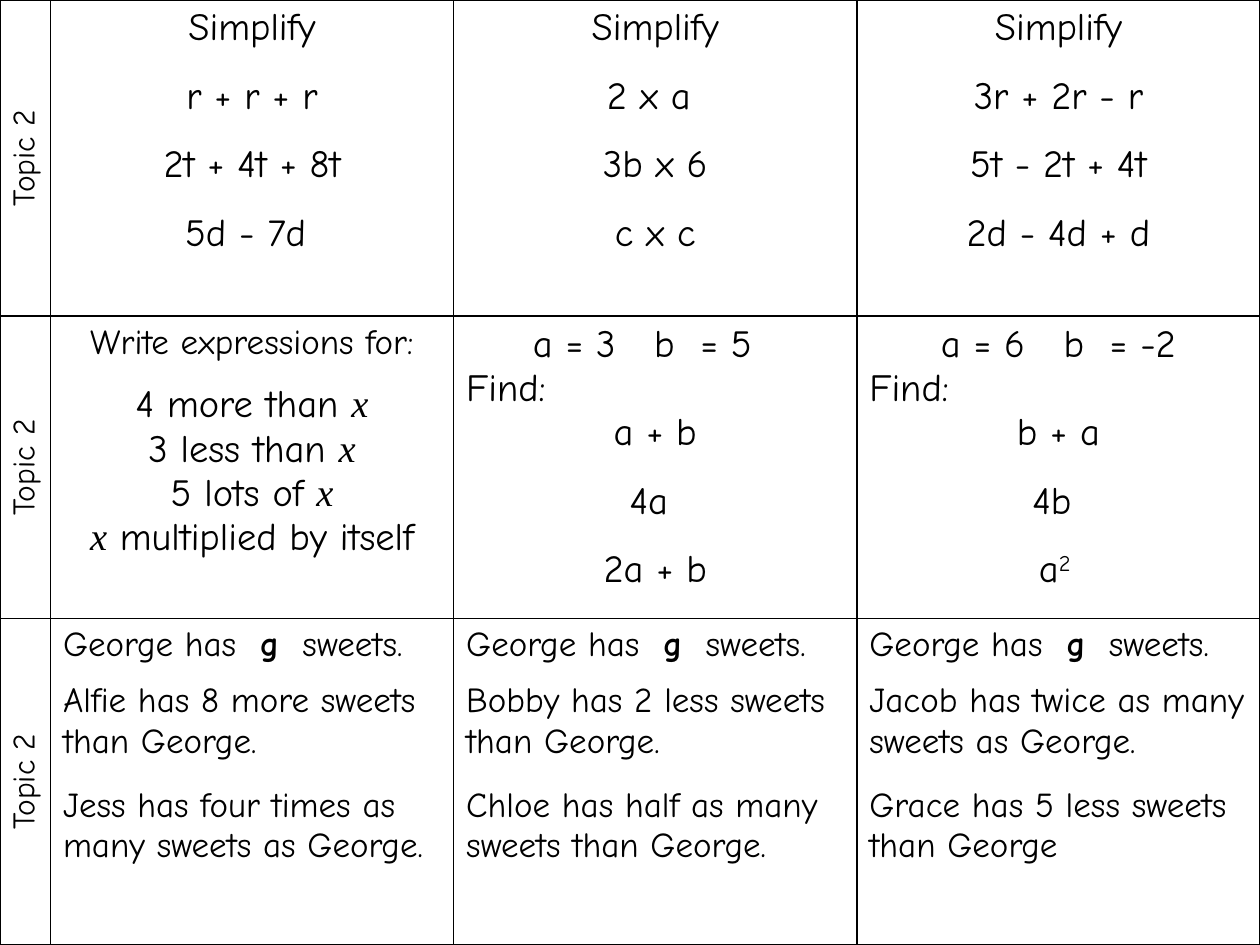
"""Build a three-by-three grid of algebra questions with a rotated topic label on each row."""
from dataclasses import dataclass

from lxml import etree
from pptx import Presentation
from pptx.dml.color import RGBColor
from pptx.enum.text import PP_ALIGN
from pptx.oxml.ns import qn
from pptx.table import _Cell
from pptx.util import Inches, Pt

LEFT, CENTER = PP_ALIGN.LEFT, PP_ALIGN.CENTER
BODY_FONT, MATH_FONT = "Comic Neue", "Times New Roman"
BLACK = "000000"
COL_WIDTHS = [0.4, 3.2, 3.2, 3.2]
ROW_HEIGHTS = [2.51, 2.4, 2.59]
WIDE_GAP, MID_GAP, SMALL_GAP = 13.8, 11.5, 9.2


@dataclass
class Span:
    text: str
    font: str = BODY_FONT
    italic: bool = False
    bold: bool = False
    raised: bool = False


@dataclass
class Line:
    spans: list[Span]
    size: float = 22
    align: PP_ALIGN = CENTER
    gap: float = 0


X = Span("x", MATH_FONT, italic=True)


def rgb(value: str) -> RGBColor:
    return RGBColor.from_string(value)


def line(text: str, size: float = 22, align: PP_ALIGN = CENTER, gap: float = 0) -> Line:
    return Line([Span(text)], size, align, gap)


def simplify(*sums: str) -> list[Line]:
    return [line("Simplify")] + [line(s, gap=WIDE_GAP) for s in sums]


def substitute(values: str, first: str, second: str, third: list[Span]) -> list[Line]:
    return [
        line(values),
        line("Find:", align=LEFT),
        line(first),
        line(second, gap=WIDE_GAP),
        Line(third, gap=WIDE_GAP),
    ]


def sweets(first: str, second: str) -> list[Line]:
    intro = [Span("George has  "), Span("g", bold=True), Span("  sweets.")]
    return [
        Line(intro, 20, LEFT),
        line(first, 20, LEFT, SMALL_GAP),
        line(second, 20, LEFT, WIDE_GAP),
    ]


EXPRESSIONS = [
    line("Write expressions for:", 20),
    Line([Span("4 more than "), X], gap=MID_GAP),
    Line([Span("3 less than "), X]),
    Line([Span("5 lots of "), X]),
    Line([X, Span(" multiplied by itself")]),
]
QUESTIONS = [
    [
        simplify("r + r + r", "2t + 4t + 8t", "5d - 7d "),
        simplify("2 x a ", "3b x 6", "c x c"),
        simplify("3r + 2r - r", "5t - 2t + 4t", "2d - 4d + d"),
    ],
    [
        EXPRESSIONS,
        substitute("a = 3   b  = 5  ", "a + b", "4a ", [Span("2a + b")]),
        substitute("a = 6   b  = -2", "b + a", "4b ", [Span("a"), Span("2 ", raised=True)]),
    ],
    [
        sweets("Alfie has 8 more sweets than George.",
               "Jess has four times as many sweets as George."),
        sweets("Bobby has 2 less sweets than George.",
               "Chloe has half as many sweets than George."),
        sweets("Jacob has twice as many sweets as George.",
               "Grace has 5 less sweets than George"),
    ],
]


def write_lines(cell: _Cell, lines: list[Line]) -> None:
    tf = cell.text_frame
    for i, item in enumerate(lines):
        p = tf.add_paragraph() if i else tf.paragraphs[0]
        p.alignment = item.align
        p.space_before = Pt(item.gap)
        for span in item.spans:
            r = p.add_run()
            r.text = span.text
            font = r.font
            font.name, font.size = span.font, Pt(item.size)
            font.bold, font.italic = span.bold, span.italic
            font.color.rgb = rgb(BLACK)
            if span.raised:
                font._element.set("baseline", "30000")


def style_cell(cell: _Cell) -> None:
    cell.fill.background()
    props = cell._tc.get_or_add_tcPr()
    for i, side in enumerate(("lnL", "lnR", "lnT", "lnB")):
        border = etree.Element(qn(f"a:{side}"), w=str(Pt(1)))
        fill = etree.SubElement(border, qn("a:solidFill"))
        etree.SubElement(fill, qn("a:srgbClr"), val=BLACK)
        props.insert(i, border)


def main() -> None:
    prs = Presentation()
    prs.slide_width, prs.slide_height = Inches(10), Inches(7.5)
    s = prs.slides.add_slide(prs.slide_layouts[6])
    table = s.shapes.add_table(
        len(ROW_HEIGHTS), len(COL_WIDTHS), 0, 0,
        Inches(sum(COL_WIDTHS)), Inches(sum(ROW_HEIGHTS)),
    ).table
    table.first_row = table.horz_banding = False
    for col, width in zip(table.columns, COL_WIDTHS):
        col.width = Inches(width)
    for row, height, questions in zip(table.rows, ROW_HEIGHTS, QUESTIONS):
        row.height = Inches(height)
        for cell, lines in zip(row.cells, [[line("Topic 2", 18)], *questions]):
            style_cell(cell)
            write_lines(cell, lines)
        row.cells[0]._tc.get_or_add_tcPr().set("vert", "vert270")
    prs.save("out.pptx")


if __name__ == "__main__":
    main()
